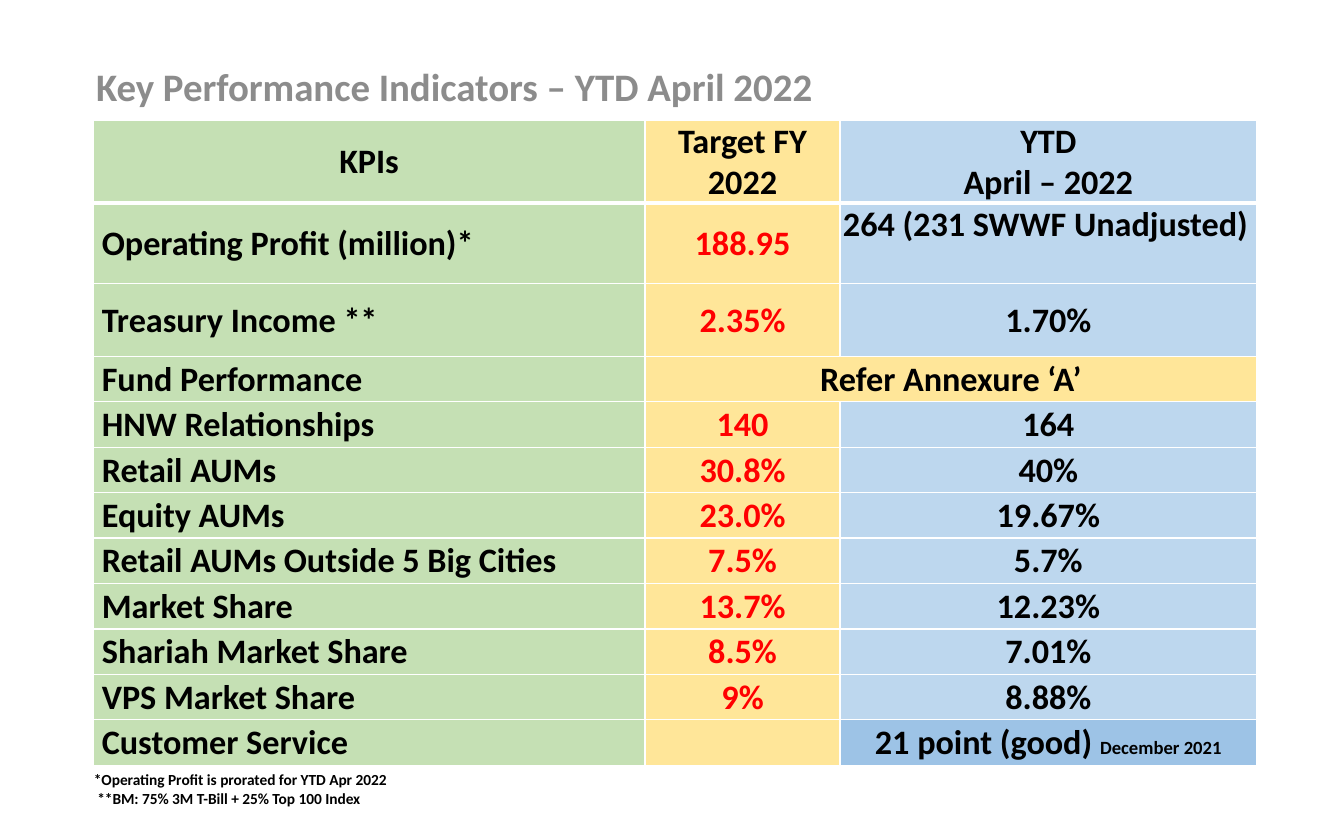
from lxml.etree import SubElement
from pptx import Presentation
from pptx.dml.color import RGBColor as Rgb
from pptx.enum.text import MSO_ANCHOR as Anchor, PP_ALIGN as Align
from pptx.oxml.ns import qn
from pptx.util import Cm, Pt

TITLE = "Key Performance Indicators – YTD April 2022"
HEADER = ("KPIs", "Target FY 2022", "YTD\nApril – 2022")
KPIS = [
    ("Operating Profit (million)*", "188.95", "264 (231 SWWF Unadjusted)"),
    ("Treasury Income **", "2.35%", "1.70%"),
    ("Fund Performance", "Refer Annexure ‘A’", ""),
    ("HNW Relationships", "140", "164"),
    ("Retail AUMs", "30.8%", "40%"),
    ("Equity AUMs", "23.0%", "19.67%"),
    ("Retail AUMs Outside 5 Big Cities", "7.5%", "5.7%"),
    ("Market Share", "13.7%", "12.23%"),
    ("Shariah Market Share", "8.5%", "7.01%"),
    ("VPS Market Share", "9%", "8.88%"),
    ("Customer Service", "", "21 point (good) "),
]
SERVICE_DATE = "December 2021"
FOOTNOTES = "*Operating Profit is prorated for YTD Apr 2022\n **BM: 75% 3M T-Bill + 25% Top 100 Index"

COLORS = {
    "title": "8C8C8C", "text": "000000", "target": "FF0000", "border": "FFFFFF",
    "kpi_fill": "C5E0B4", "target_fill": "FFE699", "ytd_fill": "BDD7EE",
    "service_fill": "9DC3E6",
}
COLUMN_FILLS = ("kpi_fill", "target_fill", "ytd_fill")
COLUMN_WIDTHS = (12.52, 4.42, 9.45)
ROW_HEIGHTS = [1.83, 1.83, 1.65] + [1.03] * 9
PROFIT_ROW, ANNEXURE_ROW, SERVICE_ROW = 1, 3, 11


def style(frame, size, color, align=Align.LEFT):
    for paragraph in frame.paragraphs:
        paragraph.alignment = align
        font = paragraph.font
        font.name, font.size, font.bold = "Calibri", Pt(size), True
        font.color.rgb = Rgb.from_string(COLORS[color])


def add_text(slide, text, box, size, color):
    frame = slide.shapes.add_textbox(*map(Cm, box)).text_frame
    frame.word_wrap = True
    frame.text = text
    style(frame, size, color)
    return frame


def set_borders(cell, row):
    widths = {
        "a:lnL": 1, "a:lnR": 1,
        "a:lnT": 3 if row == 1 else 1,
        "a:lnB": 3 if row == 0 else 1,
    }
    properties = cell._tc.get_or_add_tcPr()
    for side, width in widths.items():
        line = SubElement(properties, qn(side), w=str(Pt(width)))
        fill = SubElement(line, qn("a:solidFill"))
        SubElement(fill, qn("a:srgbClr"), val=COLORS["border"])


def fill_cell(cell, row, column, text):
    set_borders(cell, row)
    service_ytd = (row, column) == (SERVICE_ROW, 2)
    cell.fill.solid()
    fill = "service_fill" if service_ytd else COLUMN_FILLS[column]
    cell.fill.fore_color.rgb = Rgb.from_string(COLORS[fill])
    label = row > 0 and column == 0
    cell.margin_left = Cm(0.2 if label else 0.02)
    cell.margin_top = cell.margin_right = Cm(0.02)
    cell.margin_bottom = 0
    cell.vertical_anchor = Anchor.MIDDLE
    cell.text = text
    red = column == 1 and row not in (0, ANNEXURE_ROW)
    style(cell.text_frame, 22, "target" if red else "text",
          Align.LEFT if label else Align.CENTER)
    if service_ytd:
        date = cell.text_frame.paragraphs[0].add_run()
        date.text = SERVICE_DATE
        date.font.size = Pt(12)


def add_kpi_table(slide):
    rows = [HEADER] + KPIS
    table = slide.shapes.add_table(
        len(rows), len(HEADER), Cm(2.11), Cm(2.72),
        Cm(sum(COLUMN_WIDTHS)), Cm(sum(ROW_HEIGHTS))).table
    table.first_row = table.horz_banding = False
    for column, width in zip(table.columns, COLUMN_WIDTHS):
        column.width = Cm(width)
    for row, height in zip(table.rows, ROW_HEIGHTS):
        row.height = Cm(height)
    for r, values in enumerate(rows):
        for c, text in enumerate(values):
            fill_cell(table.cell(r, c), r, c, text)
    table.cell(ANNEXURE_ROW, 1).merge(table.cell(ANNEXURE_ROW, 2))
    profit_ytd = table.cell(PROFIT_ROW, 2)
    profit_ytd.vertical_anchor = Anchor.TOP
    profit_ytd.margin_right = Cm(0.15)


def main():
    deck = Presentation()
    deck.slide_width, deck.slide_height = Cm(30.48), Cm(19.05)
    slide = deck.slides.add_slide(deck.slide_layouts[6])
    title = add_text(slide, TITLE, (1.93, 1.19, 23.67, 1.65), 25, "title")
    title.vertical_anchor = Anchor.MIDDLE
    title.paragraphs[0].line_spacing = 0.9
    add_kpi_table(slide)
    add_text(slide, FOOTNOTES, (1.88, 17.35, 15.09, 1.09), 9.9, "text")
    deck.save("out.pptx")


if __name__ == "__main__":
    main()
